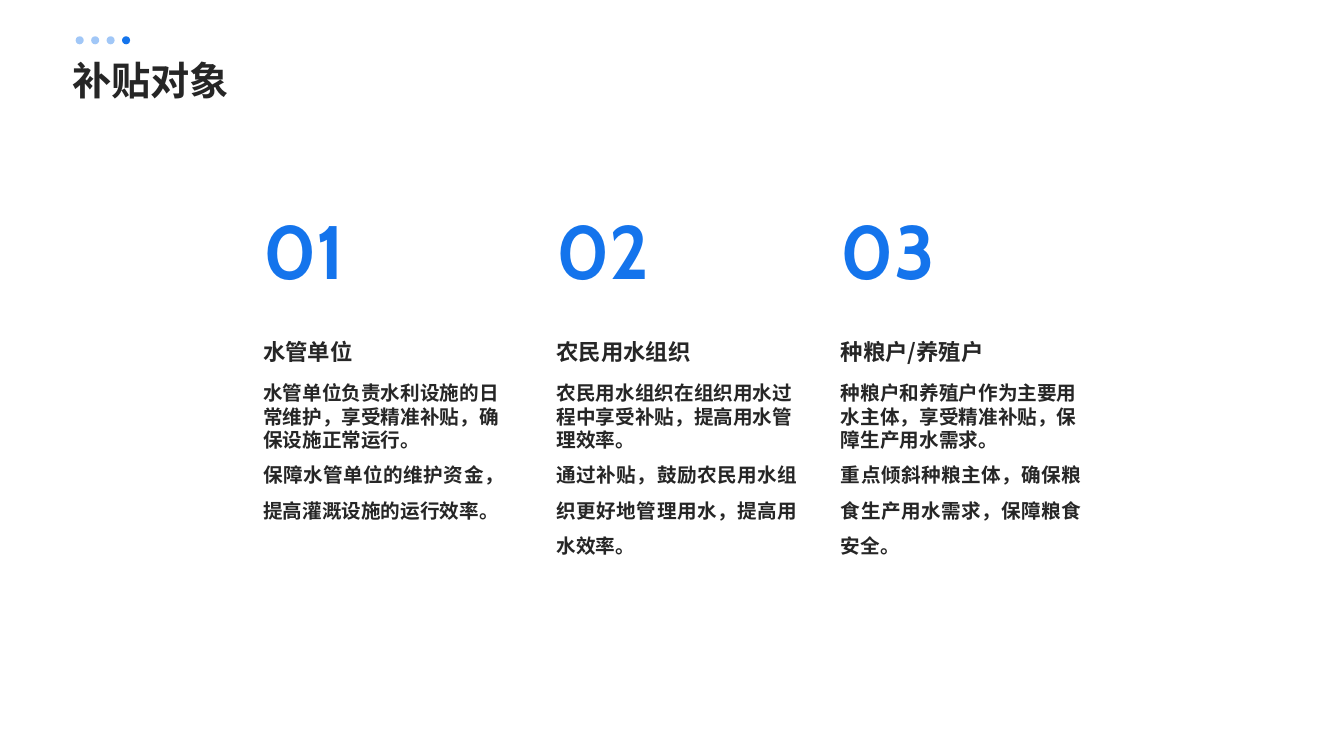
from dataclasses import dataclass

from lxml import etree
from pptx import Presentation
from pptx import util as u
from pptx.dml.color import RGBColor
from pptx.enum import shapes, text
from pptx.oxml import ns

COLORS = {"ink": "262626", "accent": "1474EC", "paper": "FFFFFF"}
CJK, DIGITS = "Noto Sans CJK SC", "Cabin"
WIDTH, HEIGHT = u.Inches(13.33), u.Inches(7.5)


@dataclass(frozen=True)
class Box:
    """A rectangle in percent of the slide's width and height."""
    left: float
    top: float
    width: float
    height: float

    def lengths(self) -> tuple[int, int, int, int]:
        return (across(self.left), down(self.top), across(self.width), down(self.height))


@dataclass(frozen=True)
class Line:
    """One paragraph with its type style."""
    words: str
    size: float
    font: str = CJK
    color: str = "ink"
    spacing: float | u.Pt = 1.0
    align: text.PP_ALIGN = text.PP_ALIGN.JUSTIFY


@dataclass(frozen=True)
class Recipient:
    left: float
    heading: str
    role: str
    benefit: str


RECIPIENTS = [
    Recipient(19.58, "水管单位",
              "水管单位负责水利设施的日常维护，享受精准补贴，确保设施正常运行。",
              "保障水管单位的维护资金，提高灌溉设施的运行效率。"),
    Recipient(41.41, "农民用水组织",
              "农民用水组织在组织用水过程中享受补贴，提高用水管理效率。",
              "通过补贴，鼓励农民用水组织更好地管理用水，提高用水效率。"),
    Recipient(62.57, "种粮户/养殖户",
              "种粮户和养殖户作为主要用水主体，享受精准补贴，保障生产用水需求。",
              "重点倾斜种粮主体，确保粮食生产用水需求，保障粮食安全。"),
]


def across(percent: float) -> int:
    return round(WIDTH * percent / 100)


def down(percent: float) -> int:
    return round(HEIGHT * percent / 100)


def add_text(slide, box: Box, lines: list[Line],
             anchor: text.MSO_ANCHOR = text.MSO_ANCHOR.TOP) -> None:
    frame = slide.shapes.add_textbox(*box.lengths()).text_frame
    frame.word_wrap = True
    frame.vertical_anchor = anchor
    frame.margin_left = frame.margin_top = frame.margin_right = frame.margin_bottom = 0
    for index, line in enumerate(lines):
        paragraph = frame.add_paragraph() if index else frame.paragraphs[0]
        paragraph.alignment = line.align
        paragraph.line_spacing = line.spacing
        run = paragraph.add_run()
        run.text = line.words
        run.font.size = u.Pt(line.size)
        run.font.bold = True
        run.font.color.rgb = RGBColor.from_string(COLORS[line.color])
        run.font.name = line.font
        east_asian = etree.SubElement(run.font._element, ns.qn("a:ea"))
        east_asian.set("typeface", line.font)


def add_dots(slide, count: int = 4) -> None:
    """Draw the row of dots over the title, only the last one opaque."""
    group = slide.shapes.add_group_shape()
    diameter = across(0.6)
    for index in range(count):
        dot = group.shapes.add_shape(shapes.MSO_SHAPE.OVAL, across(5.63 + 1.15 * index),
                                     down(4.8), diameter, diameter)
        dot.shadow.inherit = False
        dot.line.fill.background()
        dot.fill.solid()
        dot.fill.fore_color.rgb = RGBColor.from_string(COLORS["accent"])
        if index < count - 1:
            color = dot._element.spPr.find(".//" + ns.qn("a:srgbClr"))
            etree.SubElement(color, ns.qn("a:alpha")).set("val", "40000")


def add_recipient(slide, number: int, recipient: Recipient) -> None:
    left = recipient.left
    add_text(slide, Box(left, 26.93, 11.4, 12.13),
             [Line(f"{number:02}", 54, DIGITS, "accent")])
    add_text(slide, Box(left, 42.67, 17.93, 7.73),
             [Line(recipient.heading, 16)], text.MSO_ANCHOR.MIDDLE)
    add_text(slide, Box(left, 50.4, 17.9, 36.53), [
        Line(recipient.role, 14, spacing=u.Pt(16.8), align=text.PP_ALIGN.LEFT),
        Line(recipient.benefit, 14, spacing=u.Pt(25.2)),
    ])


def main() -> None:
    presentation = Presentation()
    presentation.slide_width, presentation.slide_height = WIDTH, HEIGHT
    slide = presentation.slides.add_slide(presentation.slide_layouts[6])
    slide.background.fill.solid()
    slide.background.fill.fore_color.rgb = RGBColor.from_string(COLORS["paper"])
    for number, recipient in enumerate(RECIPIENTS, start=1):
        add_recipient(slide, number, recipient)
    add_text(slide, Box(5.4, 6.8, 89.12, 6.8),
             [Line("补贴对象", 28, spacing=1.1)], text.MSO_ANCHOR.MIDDLE)
    add_dots(slide)
    presentation.save("out.pptx")


if __name__ == "__main__":
    main()
